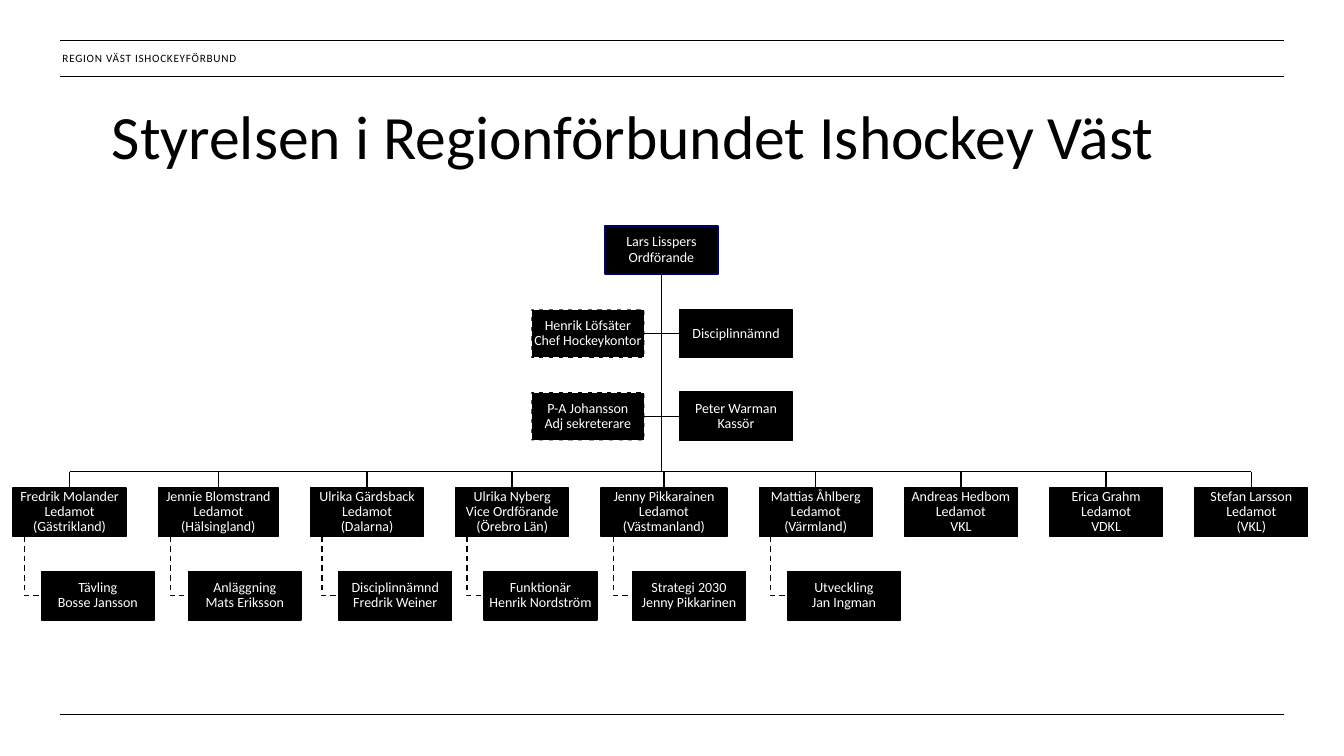
import dataclasses

import lxml.etree
import pptx
import pptx.dml.color
import pptx.enum.dml
import pptx.enum.shapes
import pptx.enum.text
import pptx.oxml.ns
import pptx.util

Inches = pptx.util.Inches
Pt = pptx.util.Pt
Dash = pptx.enum.dml.MSO_LINE
Anchor = pptx.enum.text.MSO_ANCHOR
Align = pptx.enum.text.PP_ALIGN

TITLE = "Styrelsen i Regionförbundet Ishockey Väst"
HEADER = "REGION VÄST ISHOCKEYFÖRBUND"
CHAIR = "Lars Lisspers\nOrdförande"
# Each row: adjunct left of the trunk, officer right of it
STAFF = [
    ("Henrik Löfsäter\nChef Hockeykontor", "Disciplinnämnd"),
    ("P-A Johansson\nAdj sekreterare", "Peter Warman\nKassör"),
]
# Member, box width, committee below
MEMBERS = [
    ("Fredrik Molander\nLedamot\n(Gästrikland)", 1.12, "Tävling\nBosse Jansson"),
    ("Jennie Blomstrand\nLedamot\n(Hälsingland)", 1.19, "Anläggning\nMats Eriksson"),
    ("Ulrika Gärdsback\nLedamot\n(Dalarna)", 1.12, "Disciplinnämnd\nFredrik Weiner"),
    ("Ulrika Nyberg\nVice Ordförande\n(Örebro Län)", 1.12, "Funktionär\nHenrik Nordström"),
    ("Jenny Pikkarainen\nLedamot\n(Västmanland)", 1.25, "Strategi 2030\nJenny Pikkarinen"),
    ("Mattias Åhlberg\nLedamot\n(Värmland)", 1.12, "Utveckling\nJan Ingman"),
    ("Andreas Hedbom\nLedamot\nVKL", 1.12, None),
    ("Erica Grahm\nLedamot\nVDKL", 1.12, None),
    ("Stefan Larsson\nLedamot\n(VKL)", 1.12, None),
]


@dataclasses.dataclass(frozen=True)
class Theme:
    font: str = "Calibri"
    ink: str = "000000"
    paper: str = "FFFFFF"
    chair_edge: str = "000066"
    title_size: int = 44
    box_size: int = 10
    header_size: int = 8
    line_width: int = 1


THEME = Theme()
BOX_WIDTH, BOX_HEIGHT = 1.12, 0.48
CHAIR_LEFT, CHAIR_TOP = 6, 2.24
TRUNK_X = CHAIR_LEFT + BOX_WIDTH / 2
ADJUNCT_LEFT, OFFICER_LEFT = 5.27, 6.74
STAFF_TOP, STAFF_PITCH = 3.07, 0.82
BUS_Y = 4.68
MEMBER_LEFT, MEMBER_TOP, MEMBER_GAP = 0.13, 4.84, 0.32
COMMITTEE_TOP = 5.67
RULE_LEFT, RULE_RIGHT = 0.6, 12.73
RULES_Y = (0.4, 0.76, 7.09)


def rgb(code):
    return pptx.dml.color.RGBColor.from_string(code)


def style_line(line, color=THEME.ink, dashed=False):
    line.color.rgb = rgb(color)
    line.width = Pt(THEME.line_width)
    if dashed:
        line.dash_style = Dash.DASH


def write(frame, text, size, color, align, anchor, inset):
    frame.auto_size = pptx.enum.text.MSO_AUTO_SIZE.NONE
    frame.vertical_anchor = anchor
    frame.margin_left = frame.margin_right = Inches(inset[0])
    frame.margin_top = frame.margin_bottom = Inches(inset[1])
    para = frame.paragraphs[0]
    para.text = text
    para.alignment = align
    para.line_spacing = 0.9
    para.font.name = THEME.font
    para.font.size = Pt(size)
    para.font.color.rgb = rgb(color)
    return para


def add_line(page, start, end):
    line = page.shapes.add_connector(
        pptx.enum.shapes.MSO_CONNECTOR.STRAIGHT,
        *(Inches(value) for value in (*start, *end)))
    style_line(line.line)
    lxml.etree.SubElement(line._element.spPr, pptx.oxml.ns.qn("a:effectLst"))
    return line


def add_box(page, text, left, top, width=BOX_WIDTH, edge=THEME.ink, dashed=False):
    box = page.shapes.add_shape(
        pptx.enum.shapes.MSO_SHAPE.RECTANGLE,
        Inches(left), Inches(top), Inches(width), Inches(BOX_HEIGHT))
    box.shadow.inherit = False
    box.fill.solid()
    box.fill.fore_color.rgb = rgb(THEME.ink)
    style_line(box.line, edge, dashed)
    write(box.text_frame, text, THEME.box_size, THEME.paper,
          Align.CENTER, Anchor.MIDDLE, (0.01, 0.01))
    box.text_frame.word_wrap = False
    return box


def add_committee(page, text, member_left, member_width):
    """Place a committee box and the dashed elbow that hangs it from its member."""
    left = member_left + member_width / 4
    hang_x = member_left + member_width / 10
    middle = COMMITTEE_TOP + BOX_HEIGHT / 2
    builder = page.shapes.build_freeform(
        Inches(hang_x), Inches(MEMBER_TOP + BOX_HEIGHT))
    builder.add_line_segments(
        [(Inches(hang_x), Inches(middle)), (Inches(left), Inches(middle))], close=False)
    elbow = builder.convert_to_shape()
    elbow.shadow.inherit = False
    elbow.fill.background()
    style_line(elbow.line, dashed=True)
    add_box(page, text, left, COMMITTEE_TOP)


def add_heading(page):
    for y in RULES_Y:
        add_line(page, (RULE_LEFT, y), (RULE_RIGHT, y))
    header = page.shapes.add_textbox(Inches(0.62), Inches(0.4), Inches(3.36), Inches(0.35))
    header.text_frame.word_wrap = True
    para = write(header.text_frame, HEADER, THEME.header_size, THEME.ink,
                 Align.LEFT, Anchor.MIDDLE, (0, 0))
    para.line_spacing = 1.0
    para.runs[0].font._element.set("spc", "50")

    title = page.shapes.title
    title.left, title.top = Inches(1.01), Inches(1)
    title.width, title.height = Inches(12.42), Inches(1.47)
    write(title.text_frame, TITLE, THEME.title_size, THEME.ink,
          Align.LEFT, Anchor.TOP, (0.1, 0.05))


def add_board(page):
    chair = add_box(page, CHAIR, CHAIR_LEFT, CHAIR_TOP, edge=THEME.chair_edge)
    trunk = add_line(page, (TRUNK_X, CHAIR_TOP + BOX_HEIGHT), (TRUNK_X, BUS_Y))
    trunk.begin_connect(chair, 2)

    for row, (adjunct_text, officer_text) in enumerate(STAFF):
        top = STAFF_TOP + row * STAFF_PITCH
        middle = top + BOX_HEIGHT / 2
        adjunct = add_box(page, adjunct_text, ADJUNCT_LEFT, top,
                          edge=THEME.paper, dashed=True)
        officer = add_box(page, officer_text, OFFICER_LEFT, top)
        arm = add_line(page, (ADJUNCT_LEFT + BOX_WIDTH, middle), (OFFICER_LEFT, middle))
        arm.begin_connect(adjunct, 3)
        arm.end_connect(officer, 1)

    left = MEMBER_LEFT
    centers = []
    for text, width, committee in MEMBERS:
        center = left + width / 2
        member = add_box(page, text, left, MEMBER_TOP, width)
        drop = add_line(page, (center, BUS_Y), (center, MEMBER_TOP))
        drop.end_connect(member, 0)
        if committee:
            add_committee(page, committee, left, width)
        centers.append(center)
        left += width + MEMBER_GAP
    add_line(page, (centers[0], BUS_Y), (centers[-1], BUS_Y))


def main():
    deck = pptx.Presentation()
    deck.slide_width, deck.slide_height = Inches(13.33), Inches(7.5)
    page = deck.slides.add_slide(deck.slide_layouts.get_by_name("Title Only"))
    add_heading(page)
    add_board(page)
    deck.save("out.pptx")


if __name__ == "__main__":
    main()
